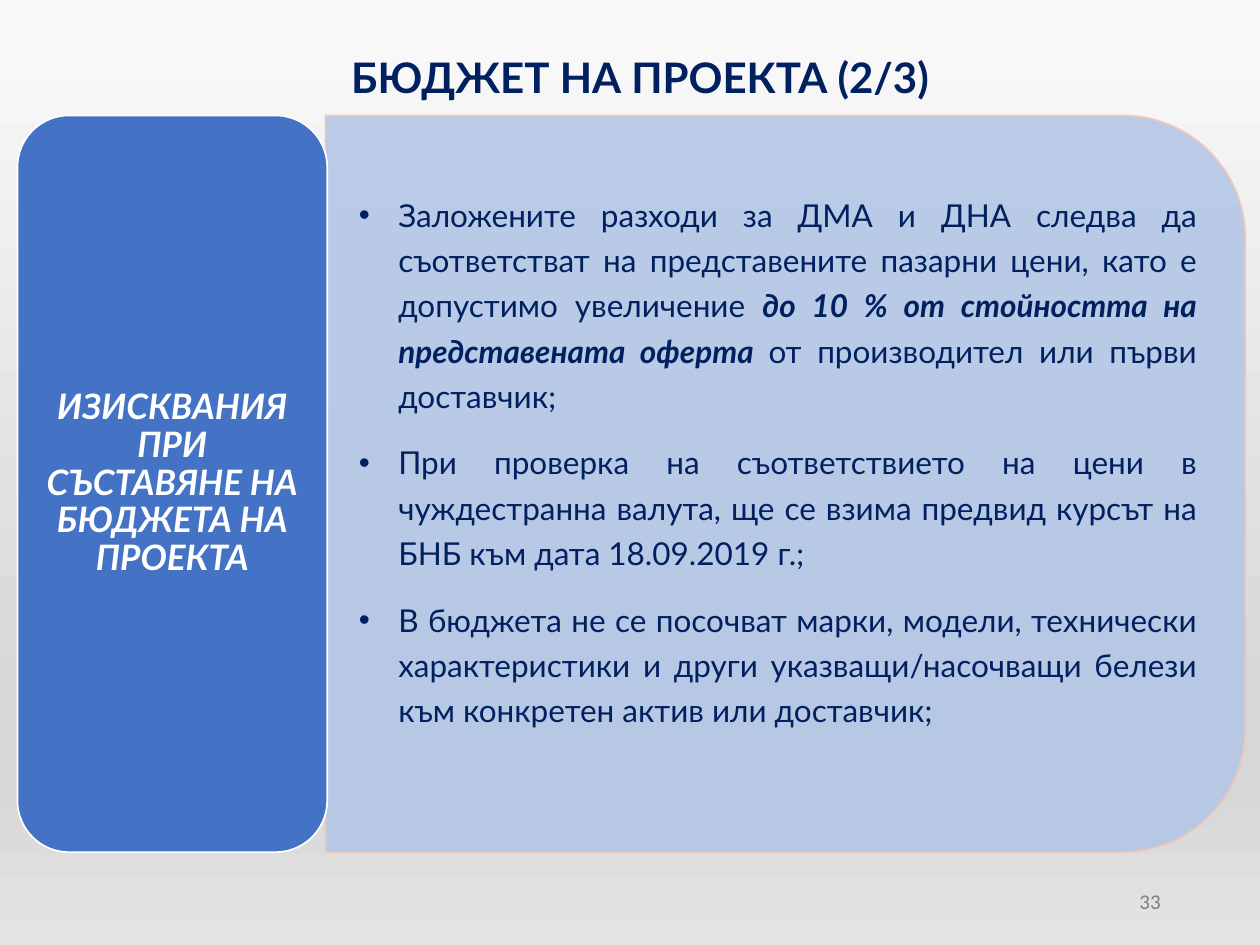
from lxml.etree import SubElement
from pptx import Presentation
from pptx.dml.color import RGBColor
from pptx.enum.shapes import MSO_SHAPE as Shape
from pptx.enum.text import MSO_ANCHOR as Anchor, PP_ALIGN as Align
from pptx.oxml.ns import qn
from pptx.util import Pt

NAVY, WHITE, GREY = "002060", "FFFFFF", "808080"
BACKDROP = [(0, "FAFAFA"), (74, "D7D7D7"), (83, "D7D7D7"), (100, "E4E4E4")]
TITLE = "БЮДЖЕТ НА ПРОЕКТА (2/3)"
LABEL = "ИЗИСКВАНИЯ ПРИ СЪСТАВЯНЕ НА БЮДЖЕТА НА ПРОЕКТА"
PAGE_NUMBER = "33"
REQUIREMENTS = [
    [("Заложените разходи за ДМА и ДНА следва да съответстват на представените "
      "пазарни цени, като е допустимо увеличение ", False),
     ("до 10 % от стойността на представената оферта ", True),
     ("от производител или първи доставчик;", False)],
    [("При проверка на съответствието на цени в чуждестранна валута, ще се взима "
      "предвид курсът на БНБ към дата 18.09.2019 г.;", False)],
    [("В бюджета не се посочват марки, модели, технически характеристики и други "
      "указващи/насочващи белези към конкретен актив или доставчик;", False)],
]
PANEL_TOP, PANEL_HEIGHT = 66, 421
PANEL_LEFT, PANEL_WIDTH = 186, 525.6
INDENT = 22.5


def color(value):
    return RGBColor.from_string(value)


def paint_background(page, stops):
    fill = page.background.fill
    fill.gradient()
    fill.gradient_angle = 270
    stop_list = fill.gradient_stops[0]._gs.getparent()
    for stop in list(stop_list):
        stop_list.remove(stop)
    for position, value in stops:
        stop = SubElement(stop_list, qn("a:gs"), pos=str(position * 1000))
        SubElement(stop, qn("a:srgbClr"), val=value)


def add_panel(page, kind, frame, fill, line, opacity=100):
    panel = page.shapes.add_shape(kind, *map(Pt, frame))
    panel.shadow.inherit = False
    panel.fill.solid()
    panel.fill.fore_color.rgb = color(fill)
    panel.line.color.rgb = color(line)
    panel.line.width = Pt(1)
    if opacity < 100:
        for tint in panel._element.spPr.iter(qn("a:srgbClr")):
            SubElement(tint, qn("a:alpha"), val=str(opacity * 1000))
    return panel


def add_text_box(page, frame, anchor=Anchor.TOP):
    box = page.shapes.add_textbox(*map(Pt, frame))
    box.text_frame.word_wrap = True
    box.text_frame.vertical_anchor = anchor
    return box


def style(para, size, value, align, name="Lato", bold=None, italic=None):
    para.alignment = align
    font = para.font
    font.name, font.size, font.bold, font.italic = name, Pt(size), bold, italic
    font.color.rgb = color(value)


def write_line(box, text, *args, **kwargs):
    para = box.text_frame.paragraphs[0]
    para.add_run().text = text
    style(para, *args, **kwargs)
    return para


def add_bullet(para):
    props = para._p.get_or_add_pPr()
    props.set("marL", str(Pt(INDENT)))
    props.set("indent", str(-Pt(INDENT)))
    bullet_font = props.makeelement(qn("a:buFont"), {"typeface": "Arial"})
    bullet = props.makeelement(qn("a:buChar"), {"char": "•"})
    props.find(qn("a:defRPr")).addprevious(bullet_font)
    bullet_font.addnext(bullet)


def write_requirements(box, items):
    frame = box.text_frame
    for index, spans in enumerate(items):
        para = frame.add_paragraph() if index else frame.paragraphs[0]
        style(para, 18, NAVY, Align.JUSTIFY)
        para.line_spacing = 1.2
        para.space_before = para.space_after = Pt(6)
        add_bullet(para)
        for text, strong in spans:
            span = para.add_run()
            span.text = text
            if strong:
                span.font.bold = span.font.italic = True


def main():
    """Build the budget requirements slide."""
    deck = Presentation()
    deck.slide_width, deck.slide_height = Pt(720), Pt(540)
    page = deck.slides.add_slide(deck.slide_layouts[6])
    paint_background(page, BACKDROP)

    number = add_text_box(page, (508.3, 500.4, 162, 28.8), Anchor.MIDDLE)
    write_line(number, PAGE_NUMBER, 12, GREY, Align.RIGHT, name="Calibri")

    shift = (PANEL_WIDTH - PANEL_HEIGHT) / 2
    upright = (PANEL_LEFT + shift, PANEL_TOP - shift, PANEL_HEIGHT, PANEL_WIDTH)
    panel = add_panel(page, Shape.ROUND_2_SAME_RECTANGLE, upright,
                      "B4C7E7", "F5C6B6", opacity=90)
    panel.rotation = 90

    label = add_panel(page, Shape.ROUNDED_RECTANGLE,
                      (10, PANEL_TOP, 177, PANEL_HEIGHT), "4472C4", WHITE)
    frame = label.text_frame
    frame.word_wrap = True
    frame.vertical_anchor = Anchor.MIDDLE
    frame.margin_left = frame.margin_right = Pt(6)
    frame.margin_top = frame.margin_bottom = Pt(3)
    para = write_line(label, LABEL, 20, WHITE, Align.CENTER, bold=True, italic=True)
    para.line_spacing = 0.9

    body = add_text_box(page, (198, 104, 493.2, 378))
    write_requirements(body, REQUIREMENTS)

    title = add_text_box(page, (42.5, 26, 646.5, 51))
    write_line(title, TITLE, 24, NAVY, Align.CENTER, bold=True)

    deck.save("out.pptx")


if __name__ == "__main__":
    main()
